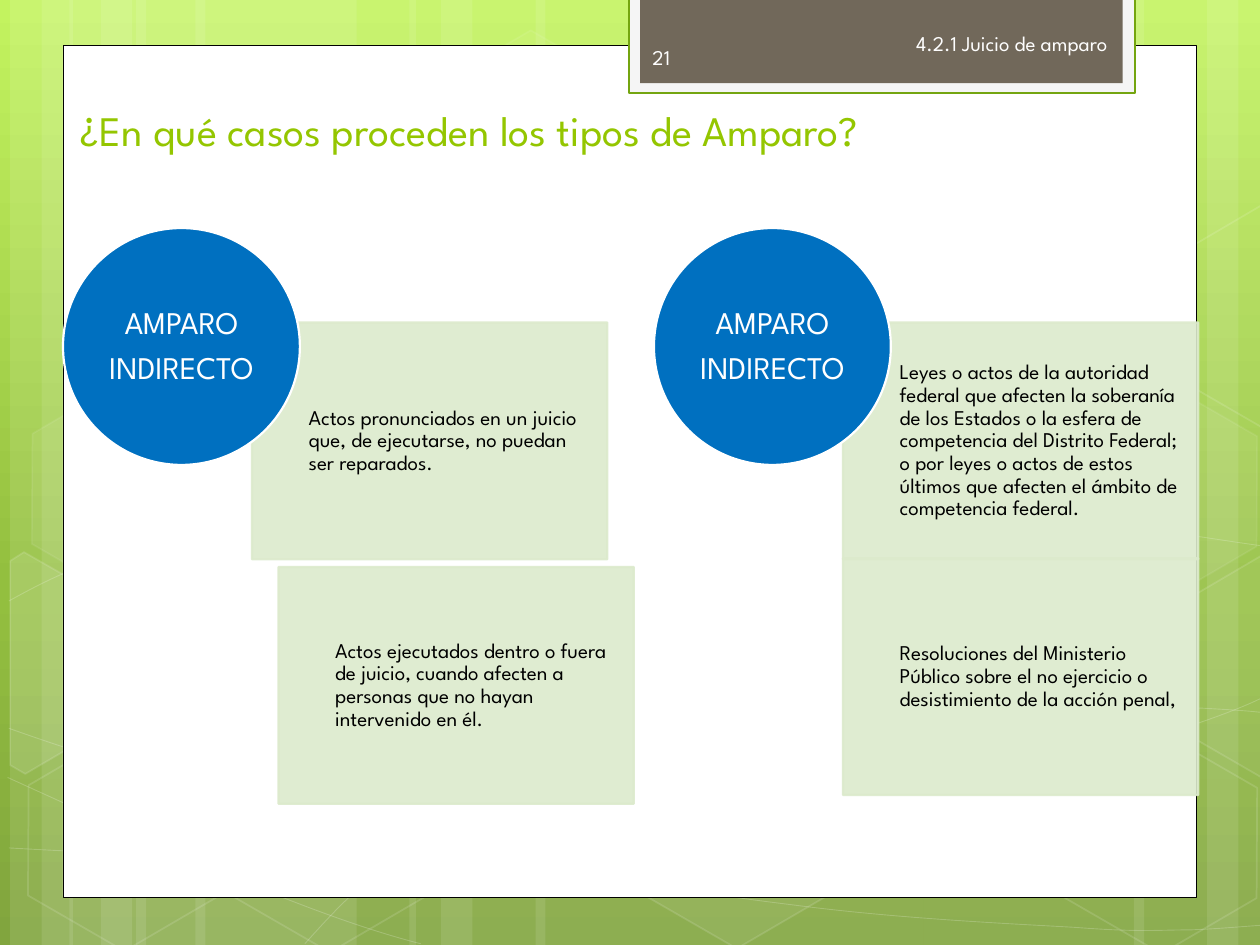
from copy import deepcopy
from dataclasses import dataclass
from math import cos, radians, sin
from typing import Optional

from lxml import etree
from pptx import Presentation
from pptx import util as u
from pptx.dml.color import RGBColor
from pptx.enum import shapes, text
from pptx.oxml.ns import qn

# The slide is a grid of 10 columns by 7.5 rows
WIDTH, HEIGHT = u.Inches(10), u.Inches(7.5)
COLUMN, ROW = WIDTH / 10, HEIGHT / 7.5
FONT = "League Spartan"
TILT = 30
COLORS = {
    "top": "C3F35F", "middle": "93BF3F", "bottom": "81A53E",
    "white": "FFFFFF", "black": "000000", "tab": "F5F5F5",
    "tab_line": "74A510", "brown": "71685A", "title": "94C600",
    "header": "FEFEFE", "card": "DCEACC", "circle": "0070C0",
}


@dataclass
class Box:
    left: float
    top: float
    width: float
    height: float

    def emu(self) -> tuple:
        return (round(self.left * COLUMN), round(self.top * ROW),
                round(self.width * COLUMN), round(self.height * ROW))


@dataclass
class Look:
    fill: Optional[str] = None
    fill_alpha: int = 100
    line: Optional[str] = None
    width: float = 1
    line_alpha: int = 100


@dataclass
class Words:
    lines: list
    size: int
    color: str
    align: int = text.PP_ALIGN.LEFT
    margins: tuple = (0.1, 0.05, 0.1, 0.05)
    spacing: Optional[float] = None
    after: float = 0
    anchor: int = text.MSO_ANCHOR.MIDDLE


@dataclass
class Topic:
    left: float
    cards: list  # (left, top, wording)


@dataclass
class CutHexagon:
    center: tuple
    points: list
    fill_alpha: int


def rgb(name: str) -> RGBColor:
    return RGBColor.from_string(COLORS[name])


def set_alpha(percent: int, parent) -> None:
    if percent < 100:
        color = parent.find(qn("a:solidFill"))[0]
        etree.SubElement(color, qn("a:alpha")).set("val", str(percent * 1000))


def paint(shape, look: Look) -> None:
    shape.shadow.inherit = False
    if look.fill:
        shape.fill.solid()
        shape.fill.fore_color.rgb = rgb(look.fill)
        set_alpha(look.fill_alpha, shape._element.spPr)
    else:
        shape.fill.background()
    if look.line:
        shape.line.color.rgb = rgb(look.line)
        shape.line.width = u.Pt(look.width)
        set_alpha(look.line_alpha, shape._element.spPr.find(qn("a:ln")))
    else:
        shape.line.fill.background()


def write(shape, words: Words) -> None:
    frame = shape.text_frame
    frame.word_wrap = True
    frame.auto_size = text.MSO_AUTO_SIZE.NONE
    frame.vertical_anchor = words.anchor
    (frame.margin_left, frame.margin_top,
     frame.margin_right, frame.margin_bottom) = map(u.Inches, words.margins)
    frame.text = "\n".join(words.lines)
    for paragraph in frame.paragraphs:
        paragraph.alignment = words.align
        paragraph.font.name = FONT
        paragraph.font.size = u.Pt(words.size)
        paragraph.font.color.rgb = rgb(words.color)
        paragraph.space_after = u.Pt(words.after)
        if words.spacing:
            paragraph.line_spacing = words.spacing


def add_shape(slide, kind, box: Box, look: Look, words: Optional[Words] = None):
    shape = slide.shapes.add_shape(kind, *box.emu())
    paint(shape, look)
    if words:
        write(shape, words)
    return shape


def add_outline(slide, points: list, look: Look, close: bool):
    spots = [(round(x * COLUMN), round(y * ROW)) for x, y in points]
    builder = slide.shapes.build_freeform(*spots[0], scale=1.0)
    builder.add_line_segments(spots[1:], close=close)
    shape = builder.convert_to_shape()
    paint(shape, look)
    return shape


def add_curve(slide, knots: list, look: Look) -> None:
    """A start, then three knots for each cubic curve."""
    shape = add_outline(slide, knots, look, False)
    lines = list(shape._element.iter(qn("a:lnTo")))
    for first in range(0, len(lines), 3):
        curve = etree.Element(qn("a:cubicBezTo"))
        lines[first].addprevious(curve)
        for line in lines[first:first + 3]:
            curve.append(line[0])
            line.getparent().remove(line)


def add_cut_hexagon(slide, cut: CutHexagon) -> None:
    center_x, center_y = cut.center
    cosine, sine = cos(radians(TILT)), sin(radians(TILT))
    upright = [(center_x + (x - center_x) * cosine + (y - center_y) * sine,
                center_y - (x - center_x) * sine + (y - center_y) * cosine)
               for x, y in cut.points]
    add_outline(slide, upright, glass(cut.fill_alpha, 12), True).rotation = TILT


BANDS = [(1.08, 1.75), (0.08, 0.5), (0.33, 0.83), (1.55, 1.75), (0.55, 0.5), (0.8, 0.83),
         (7.33, 1.75), (9.58, 0.5), (9, 0.83), (4.25, 3.08), (3.25, 0.5), (3.5, 0.83)]
CURVES = [
    [(0.07, 6.73), (0.61, 6.76), (1.15, 6.79), (1.9, 6.78), (2.65, 6.77), (3.58, 6.75),
     (4.58, 6.65), (5.58, 6.55), (7, 6.36), (7.92, 6.17), (8.83, 5.98), (9.77, 5.68), (10.07, 5.51)],
    [(0.07, 4.77), (0.36, 4.61), (0.65, 4.46), (1.21, 4.31), (1.78, 4.16), (2.59, 3.94),
     (3.47, 3.87), (4.36, 3.8), (5.44, 3.79), (6.54, 3.87), (7.64, 3.95), (9.47, 4.26), (10.07, 4.34)],
    [(0.06, 6.17), (1.27, 6.72), (2.47, 7.27), (3.34, 7.49)],
    [(0.07, 5.78), (0.38, 5.89), (0.7, 6), (1.28, 6.16), (1.86, 6.31), (2.73, 6.56),
     (3.57, 6.73), (4.4, 6.9), (5.45, 7.08), (6.28, 7.18), (7.11, 7.29), (8, 7.33),
     (8.53, 7.36), (9.05, 7.4), (9.19, 7.38), (9.45, 7.38), (9.71, 7.37), (9.89, 7.35), (10.07, 7.34)],
    [(2.42, 7.49), (2.6, 7.29), (2.78, 7.09), (3.02, 6.91), (3.26, 6.73), (3.6, 6.53),
     (3.88, 6.39), (4.16, 6.25), (4.33, 6.19), (4.7, 6.09), (5.06, 5.99), (5.73, 5.85),
     (6.08, 5.78), (6.44, 5.71), (6.49, 5.71), (6.8, 5.69), (7.11, 5.66), (7.6, 5.63),
     (7.94, 5.62), (8.29, 5.61), (8.86, 5.62), (8.86, 5.62), (9.08, 5.62), (9.31, 5.62),
     (9.53, 5.62), (9.71, 5.63), (9.88, 5.64), (9.97, 5.65), (10.06, 5.66), (10.03, 5.65), (10.06, 5.66)],
]
# left, top, fill alpha (0 for none), line alpha
HEXAGONS = [(3.34, 0.36, 4, 8), (4.97, 5.89, 6, 12), (0.11, 5.91, 0, 12), (0.14, 3.12, 7, 8),
            (1.74, 5.92, 0, 12), (7.53, 4.53, 10, 12), (8.34, 5.93, 0, 12), (8.34, 3.14, 7, 8)]
LEFT_PART = [(0.08, 4.45), (0.19, 4.38), (0.96, 4.82), (0.95, 5.7), (0.2, 6.14), (0.08, 6.07)]
RIGHT_PART = [(9.26, 4.85), (10.01, 4.41), (10.09, 4.46), (10.09, 6.13), (10.02, 6.17), (9.26, 5.73)]
CUT_HEXAGONS = [CutHexagon((0.36, 5.35), LEFT_PART, 10), CutHexagon((9.85, 5.2), RIGHT_PART, 4),
                CutHexagon((9.85, 2.42), [(x, y - 2.78) for x, y in RIGHT_PART], 0)]

TOPICS = [
    Topic(0.5, [
        (2, 2.56, "Actos pronunciados en un juicio que, de ejecutarse, no puedan ser reparados."),
        (2.21, 4.5, "Actos ejecutados dentro o fuera de juicio, cuando afecten a personas que "
                    "no hayan intervenido en él.")]),
    Topic(5.19, [
        (6.69, 2.56, "Leyes o actos de la autoridad federal que afecten la soberanía de los Estados "
                     "o la esfera de competencia del Distrito Federal; o por leyes o actos de estos "
                     "últimos que afecten el ámbito de competencia federal."),
        (6.69, 4.43, "Resoluciones del Ministerio Público sobre el no ejercicio o desistimiento "
                     "de la acción penal,")]),
]


def add_background(slide) -> None:
    fill = slide.background.fill
    fill.gradient()
    fill.gradient_angle = 270
    stop_list = slide._element.find(".//" + qn("a:gsLst"))
    stop_list.append(deepcopy(stop_list[-1]))
    for stop, (position, name) in zip(fill.gradient_stops,
                                      [(0, "top"), (0.62, "middle"), (1, "bottom")]):
        stop.position = position
        stop.color.rgb = rgb(name)


def glass(fill_alpha: int, line_alpha: int) -> Look:
    return Look("white" if fill_alpha else None, fill_alpha, "white", 1, line_alpha)


def add_decoration(slide) -> None:
    for left, width in BANDS:
        add_shape(slide, shapes.MSO_SHAPE.RECTANGLE, Box(left, 0, width, 7.5), Look("white", 10))
    for knots in CURVES:
        add_curve(slide, knots, Look(None, 100, "white", 0.5, 20))
    for left, top, fill_alpha, line_alpha in HEXAGONS:
        hexagon = add_shape(slide, shapes.MSO_SHAPE.HEXAGON, Box(left, top, 1.75, 1.52),
                            glass(fill_alpha, line_alpha))
        hexagon.adjustments[0] = 0.285
        hexagon.rotation = TILT
    for cut in CUT_HEXAGONS:
        add_cut_hexagon(slide, cut)


def add_topic(slide, topic: Topic) -> None:
    for left, top, wording in topic.cards:
        add_shape(slide, shapes.MSO_SHAPE.RECTANGLE, Box(left, top, 2.82, 1.88),
                  Look("card", 90, "card", 1.25, 90),
                  Words([wording], 12, "black", margins=(0.45, 0.09, 0.09, 0.09), spacing=0.9))
    add_shape(slide, shapes.MSO_SHAPE.OVAL, Box(topic.left, 1.81, 1.88, 1.88),
              Look("circle", 100, "white", 1.25),
              Words(["AMPARO", "INDIRECTO"], 18, "white", text.PP_ALIGN.CENTER,
                    (0, 0, 0, 0), 0.9, 6.3))


def main() -> None:
    presentation = Presentation()
    presentation.slide_width, presentation.slide_height = WIDTH, HEIGHT
    slide = presentation.slides.add_slide(presentation.slide_layouts[5])
    add_background(slide)
    add_decoration(slide)

    # White panel and header tab
    for box, look in [(Box(0.5, 0.36, 9, 6.76), Look("white", 100, "black", 0.5)),
                      (Box(4.99, -0.02, 4.02, 0.76), Look("tab", 100, "tab_line", 1.25)),
                      (Box(5.08, -0.02, 3.83, 0.68), Look("brown"))]:
        add_shape(slide, shapes.MSO_SHAPE.RECTANGLE, box, look)

    # Title, brought in front of the panel
    title = slide.shapes.title
    title.left, title.top, title.width, title.height = Box(0.54, 0.92, 8.94, 0.36).emu()
    write(title, Words(["¿En qué casos proceden los tipos de Amparo?"], 24, "title",
                       anchor=text.MSO_ANCHOR.BOTTOM))
    slide.shapes._spTree.append(title._element)

    # Header wording
    for box, words in [
            (Box(6.56, 0.25, 2.33, 0.4), Words(["4.2.1 Juicio de amparo"], 12, "header",
                                               text.PP_ALIGN.RIGHT, (0.1, 0, 0.1, 0.21))),
            (Box(5.08, 0.25, 1.46, 0.4), Words(["21"], 12, "header"))]:
        write(slide.shapes.add_textbox(*box.emu()), words)

    for topic in TOPICS:
        add_topic(slide, topic)
    presentation.save("out.pptx")


if __name__ == "__main__":
    main()
